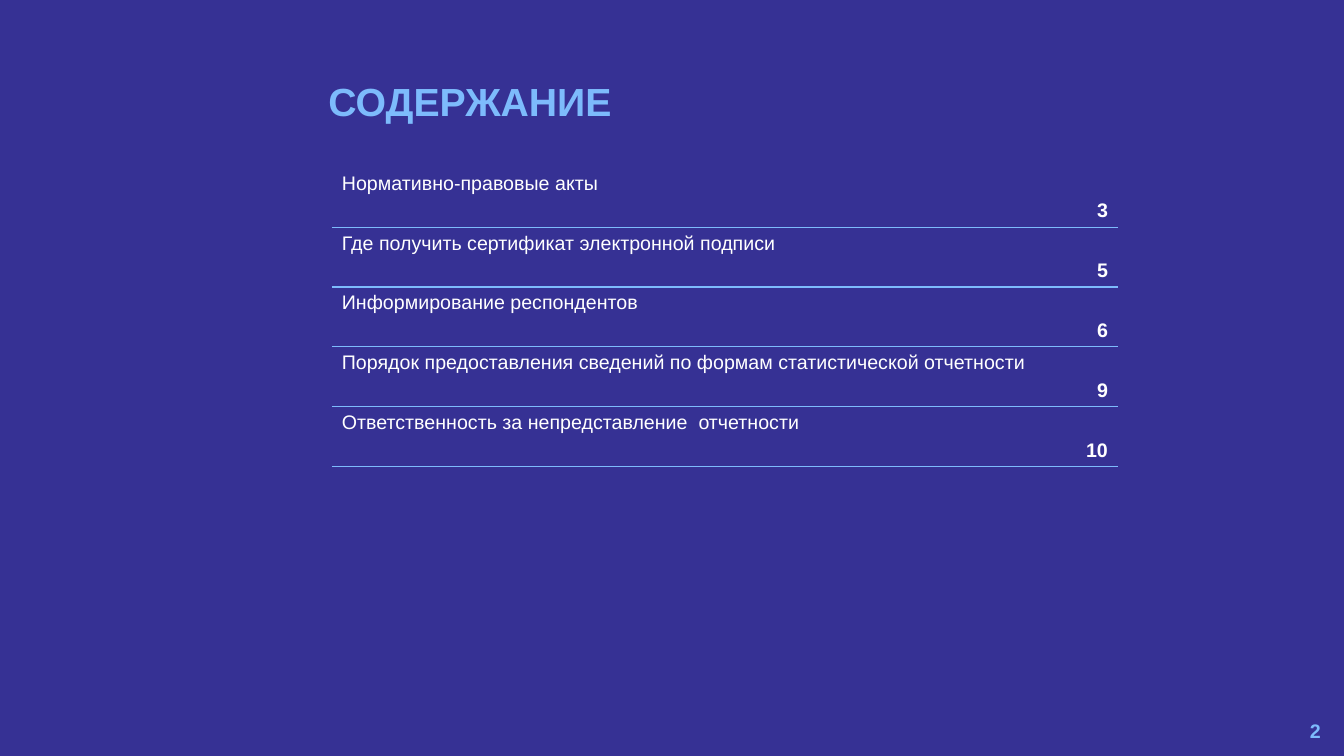
from lxml import etree
from pptx import Presentation
from pptx.dml.color import RGBColor
from pptx.enum import text as tx
from pptx.oxml import ns
from pptx.util import Pt

theme = {
    "back": RGBColor.from_string("363194"),
    "sky": RGBColor.from_string("7DBBFC"),
    "white": RGBColor.from_string("FFFFFF"),
    "face": "Arial",
    "head": Pt(28),
    "body": Pt(14),
}
plain = "{2D5ABB26-0587-4C30-8999-92F81FD0307C}"
left, right = tx.PP_ALIGN.LEFT, tx.PP_ALIGN.RIGHT
top, mid, low = tx.MSO_ANCHOR.TOP, tx.MSO_ANCHOR.MIDDLE, tx.MSO_ANCHOR.BOTTOM

items = [
    ("Нормативно-правовые акты", "3"),
    ("Где получить сертификат электронной подписи", "5"),
    ("Информирование респондентов", "6"),
    ("Порядок предоставления сведений по формам статистической отчетности", "9"),
    ("Ответственность за непредставление  отчетности", "10"),
]


def write(frame, words, size, color, bold, align):
    para = frame.paragraphs[0]
    para.alignment = align
    run = para.add_run()
    run.text = words
    style = {"name": theme["face"], "size": theme[size], "bold": bold}
    for key, value in style.items():
        setattr(run.font, key, value)
    run.font.color.rgb = theme[color]
    return para


def rule(cell):
    props = cell._tc.get_or_add_tcPr()
    line = etree.Element(ns.qn("a:lnB"), w=str(Pt(1)))
    fill = etree.SubElement(line, ns.qn("a:solidFill"))
    etree.SubElement(fill, ns.qn("a:srgbClr"), val=str(theme["sky"]))
    props.insert(0, line)


deck = Presentation()
deck.slide_width, deck.slide_height = Pt(960), Pt(540)
slide = deck.slides.add_slide(deck.slide_layouts[6])
slide.background.fill.solid()
slide.background.fill.fore_color.rgb = theme["back"]

title = slide.shapes.add_textbox(Pt(227.5), Pt(55.5), Pt(730), Pt(80)).text_frame
title.word_wrap = True
write(title, "СОДЕРЖАНИЕ", "head", "sky", True, left).line_spacing = 0.9

page = slide.shapes.add_textbox(Pt(734.5), Pt(507.6), Pt(216), Pt(28.8)).text_frame
page.word_wrap = True
page.vertical_anchor = mid
write(page, "2", "body", "sky", True, right)

height = 42.75
grid = slide.shapes.add_table(
    len(items), 2, Pt(237), Pt(119.5), Pt(561.6), Pt(height * len(items))
).table
grid.first_row = grid.horz_banding = False
grid._tbl.tblPr[0].text = plain
for col, width in zip(grid.columns, (512, 49.6)):
    col.width = Pt(width)

looks = [(False, left, top), (True, right, low)]
for row, item in zip(grid.rows, items):
    row.height = Pt(height)
    for cell, words, (bold, align, anchor) in zip(row.cells, item, looks):
        cell.fill.background()
        cell.vertical_anchor = anchor
        write(cell.text_frame, words, "body", "white", bold, align)
        rule(cell)

deck.save("out.pptx")
